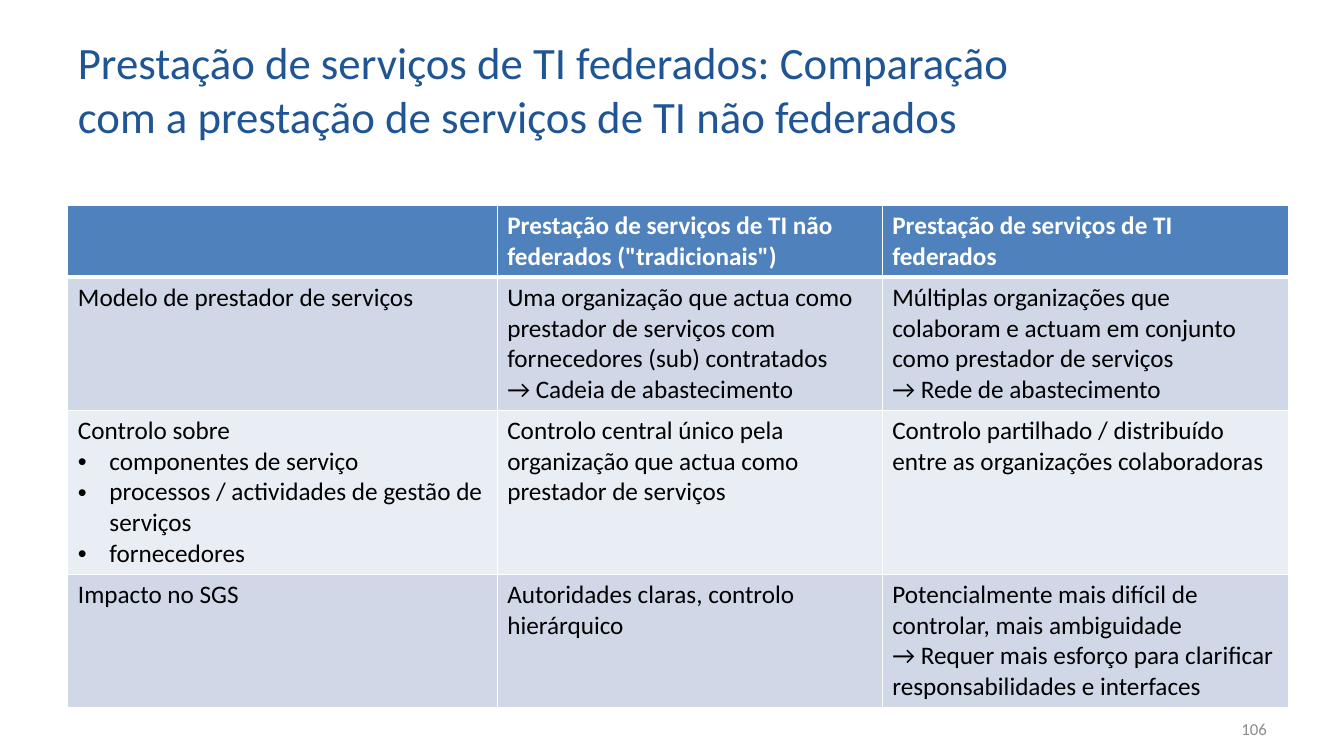
from lxml import etree
from pptx import Presentation
from pptx.dml.color import RGBColor
from pptx.enum import text
from pptx.oxml import ns
from pptx.util import Pt

NAVY = RGBColor(0x20, 0x55, 0x95)
GREY = RGBColor(0x8C, 0x8C, 0x8C)
BLUE = RGBColor(0x4F, 0x81, 0xBD)
DARK = RGBColor(0xD0, 0xD8, 0xE8)
LIGHT = RGBColor(0xE9, 0xED, 0xF4)
WHITE = RGBColor(0xFF, 0xFF, 0xFF)
BLACK = RGBColor(0x00, 0x00, 0x00)

TITLE = ("Prestação de serviços de TI federados: Comparação "
         "com a prestação de serviços de TI não federados")
COLS = [306.7, 275, 290.3]
ROWS = [51.1, 95.1, 117.1, 95.1]
CELLS = [
    ["",
     'Prestação de serviços de TI não federados ("tradicionais")',
     "Prestação de serviços de TI federados"],
    ["Modelo de prestador de serviços",
     "Uma organização que actua como prestador de serviços com "
     "fornecedores (sub) contratados\n→ Cadeia de abastecimento",
     "Múltiplas organizações que colaboram e actuam em conjunto "
     "como prestador de serviços\n→ Rede de abastecimento"],
    ["Controlo sobre\n• componentes de serviço\n"
     "• processos / actividades de gestão de serviços\n• fornecedores",
     "Controlo central único pela organização que actua como "
     "prestador de serviços",
     "Controlo partilhado / distribuído entre as organizações "
     "colaboradoras"],
    ["Impacto no SGS",
     "Autoridades claras, controlo hierárquico",
     "Potencialmente mais difícil de controlar, mais ambiguidade\n"
     "→ Requer mais esforço para clarificar responsabilidades e interfaces"],
]


def style(par, size, color, bold=False):
    """Format the runs of a paragraph."""
    for run in par.runs:
        font = run.font
        font.name, font.size, font.bold = "Calibri", Pt(size), bold
        font.color.rgb = color


def add_text(slide, box, words, size, color, align):
    """Add a wrapped, vertically centred text box."""
    frame = slide.shapes.add_textbox(*map(Pt, box)).text_frame
    frame.word_wrap = True
    frame.vertical_anchor = text.MSO_ANCHOR.MIDDLE
    frame.text = words
    par = frame.paragraphs[0]
    par.alignment = align
    style(par, size, color)


def add_bullet(par):
    """Give a paragraph a hanging bullet."""
    props = par._p.get_or_add_pPr()
    props.set("marL", str(Pt(22.5)))
    props.set("indent", str(Pt(-22.5)))
    etree.SubElement(props, ns.qn("a:buFont")).set("typeface", "Arial")
    etree.SubElement(props, ns.qn("a:buChar")).set("char", "•")


def add_edge(cell, side, width):
    """Draw one white cell border."""
    props = cell._tc.get_or_add_tcPr()
    line = etree.SubElement(props, ns.qn("a:ln" + side), w=str(Pt(width)))
    fill = etree.SubElement(line, ns.qn("a:solidFill"))
    etree.SubElement(fill, ns.qn("a:srgbClr")).set("val", str(WHITE))


def fill_cell(cell, words, row):
    """Write and colour one table cell."""
    head = row == 0
    widths = {"L": 1, "R": 1, "T": 3 if row == 1 else 1, "B": 3 if head else 1}
    for side, width in widths.items():
        add_edge(cell, side, width)
    cell.fill.solid()
    cell.fill.fore_color.rgb = BLUE if head else DARK if row % 2 else LIGHT
    cell.text_frame.text = words
    for par in cell.text_frame.paragraphs:
        if par.text.startswith("• "):
            par.text = par.text[2:]
            add_bullet(par)
        style(par, 18, WHITE if head else BLACK, head)


def add_grid(slide):
    """Add the comparison table."""
    box = 48.5, 147, sum(COLS), sum(ROWS)
    grid = slide.shapes.add_table(len(ROWS), len(COLS), *map(Pt, box)).table
    for col, width in zip(grid.columns, COLS):
        col.width = Pt(width)
    for row, height in enumerate(ROWS):
        grid.rows[row].height = Pt(height)
        for col, words in enumerate(CELLS[row]):
            fill_cell(grid.cell(row, col), words, row)


def main():
    """Build the slide and save it."""
    deck = Presentation()
    deck.slide_width, deck.slide_height = Pt(960), Pt(540)
    slide = deck.slides.add_slide(deck.slide_layouts[6])
    add_text(slide, (48.5, 21.6, 713.5, 82.8), TITLE, 32, NAVY,
             text.PP_ALIGN.LEFT)
    add_grid(slide)
    add_text(slide, (688, 506, 224, 28.8), "106", 12, GREY,
             text.PP_ALIGN.RIGHT)
    deck.save("out.pptx")


if __name__ == "__main__":
    main()
